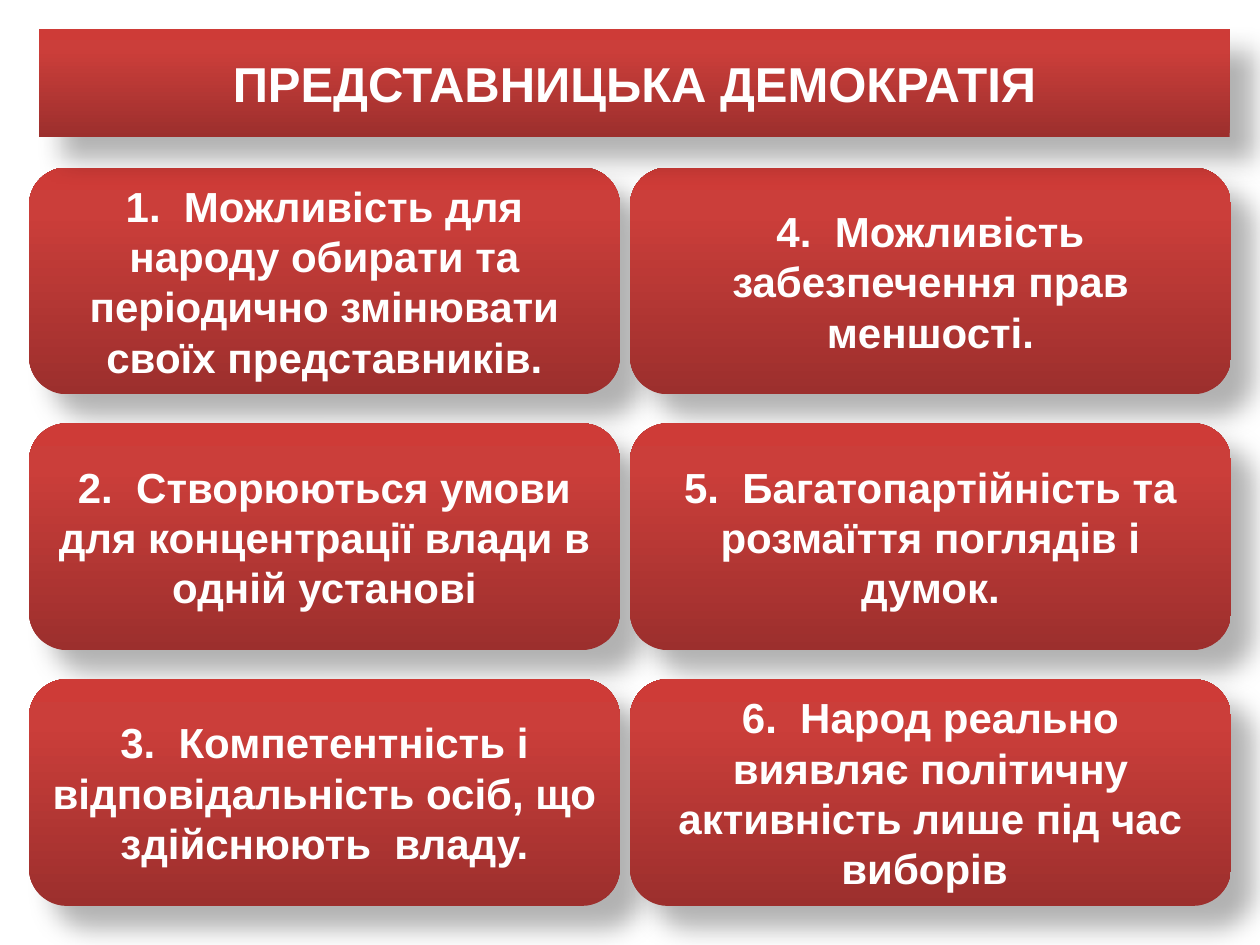
"""Build a slide of six features of representative democracy."""
from dataclasses import dataclass

from pptx import Presentation, util as u
from pptx.dml.color import RGBColor
from pptx.enum import shapes, text
from pptx.oxml import parse_xml
from pptx.oxml.ns import nsdecls

WIDTH, HEIGHT = 10, 7.5
COLUMNS = ((0.23, 4.69), (5, 4.77))
FIRST_ROW, ROW_PITCH, ROW_HEIGHT = 1.33, 2.03, 1.8
GRADIENT = ((0, "9C2F2D"), (80, "CB3E3A"), (100, "CE3B37"))
SHADOW, WHITE = "000000", "FFFFFF"
FRAME_FORMAT = {
    "word_wrap": True,
    "auto_size": text.MSO_AUTO_SIZE.NONE,
    "vertical_anchor": text.MSO_ANCHOR.MIDDLE,
    "margin_left": u.Inches(0.08),
    "margin_right": u.Inches(0.08),
    "margin_top": u.Inches(0.05),
    "margin_bottom": u.Inches(0.05),
}


@dataclass(frozen=True)
class Feature:
    column: int
    row: int
    wording: str


FEATURES = (
    Feature(0, 0, "1.  Можливість для народу обирати та періодично змінювати своїх представників."),
    Feature(1, 0, "4.  Можливість забезпечення прав меншості."),
    Feature(0, 1, "2.  Створюються умови для концентрації влади в одній установі"),
    Feature(1, 1, "5.  Багатопартійність та розмаїття поглядів і думок."),
    Feature(0, 2, "3.  Компетентність і відповідальність осіб, що здійснюють  владу."),
    Feature(1, 2, "6.  Народ реально виявляє політичну активність лише під час виборів "),
)


def color(value: str) -> RGBColor:
    return RGBColor.from_string(value)


def apply(target, values: dict) -> None:
    for name, value in values.items():
        setattr(target, name, value)


def add_surface(panel) -> None:
    namespace = nsdecls("a")
    stops = "".join(
        f'<a:gs pos="{share * 1000}"><a:srgbClr val="{color(value)}"/></a:gs>'
        for share, value in GRADIENT
    )
    parts = (
        f'<a:gradFill {namespace} rotWithShape="1"><a:gsLst>{stops}</a:gsLst>'
        '<a:lin ang="16200000" scaled="0"/></a:gradFill>',
        f"<a:ln {namespace}><a:noFill/></a:ln>",
        f'<a:effectLst {namespace}><a:outerShdw blurRad="{u.Pt(15)}" dist="{u.Pt(18)}" '
        f'dir="2700000" algn="tl" rotWithShape="0"><a:srgbClr val="{color(SHADOW)}">'
        '<a:alpha val="30000"/></a:srgbClr></a:outerShdw></a:effectLst>',
    )
    for part in parts:
        panel._element.spPr.append(parse_xml(part))


def write(panel, wording: str, size: float) -> None:
    frame = panel.text_frame
    apply(frame, FRAME_FORMAT)
    paragraph = frame.paragraphs[0]
    paragraph.alignment = text.PP_ALIGN.CENTER
    run = paragraph.add_run()
    run.text = wording
    apply(run.font, {"name": "Arial", "size": u.Pt(size), "bold": True})
    run.font.color.rgb = color(WHITE)


def draw_feature(slide, feature: Feature) -> None:
    left, width = COLUMNS[feature.column]
    top = FIRST_ROW + feature.row * ROW_PITCH
    card = slide.shapes.add_shape(
        shapes.MSO_SHAPE.ROUNDED_RECTANGLE,
        *map(u.Inches, (left, top, width, ROW_HEIGHT)),
    )
    add_surface(card)
    write(card, feature.wording, 24)


def draw_heading(slide, wording: str) -> None:
    heading = slide.shapes.title
    apply(heading, {
        "left": u.Inches(0.31),
        "top": u.Inches(0.23),
        "width": u.Inches(9.45),
        "height": u.Inches(0.86),
    })
    heading._element.spPr.append(parse_xml(
        f'<a:prstGeom {nsdecls("a")} prst="roundRect"><a:avLst/></a:prstGeom>'
    ))
    add_surface(heading)
    write(heading, wording, 28)
    slide.shapes._spTree.append(heading._element)


def main() -> None:
    deck = Presentation()
    apply(deck, {"slide_width": u.Inches(WIDTH), "slide_height": u.Inches(HEIGHT)})
    slide = deck.slides.add_slide(deck.slide_layouts.get_by_name("Title Only"))
    for feature in FEATURES:
        draw_feature(slide, feature)
    draw_heading(slide, "ПРЕДСТАВНИЦЬКА ДЕМОКРАТІЯ")
    deck.save("out.pptx")


if __name__ == "__main__":
    main()
